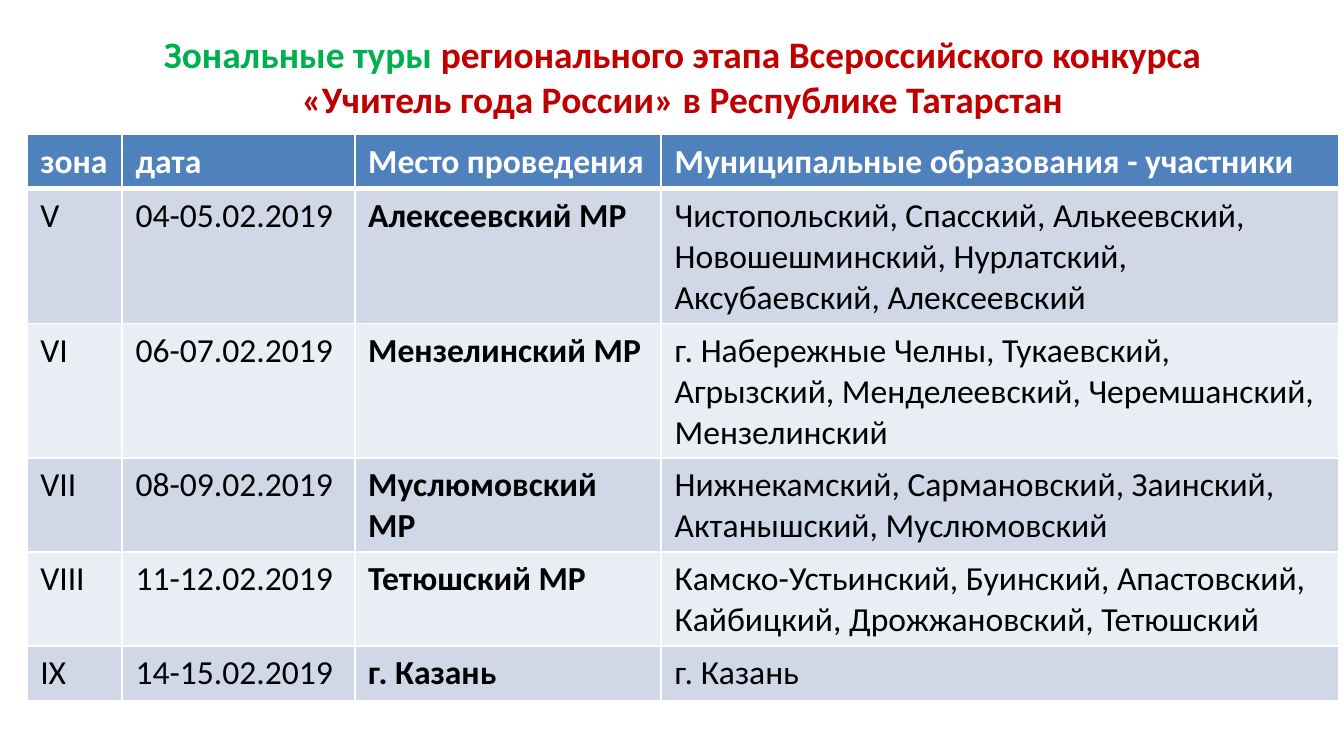
from lxml import etree
from pptx import Presentation
from pptx import util as u
from pptx.dml.color import RGBColor
from pptx.enum import text
from pptx.oxml import ns

COLORS = {
    "green": "00B050",
    "red": "C00000",
    "header": "4F81BD",
    "odd": "D0D8E8",
    "even": "E9EDF4",
    "white": "FFFFFF",
    "black": "000000",
}
COLUMN_WIDTHS = [51.1, 124.6, 164.2, 362.9]
ROW_HEIGHT = 29.2
HEADINGS = ["зона", "дата", "Место проведения", "Муниципальные образования - участники"]
ZONES = [
    ("V", "04-05.02.2019", "Алексеевский МР",
     "Чистопольский, Спасский, Алькеевский, Новошешминский, Нурлатский, Аксубаевский, Алексеевский"),
    ("VI", "06-07.02.2019", "Мензелинский МР",
     "г. Набережные Челны, Тукаевский, Агрызский, Менделеевский, Черемшанский, Мензелинский"),
    ("VII", "08-09.02.2019", "Муслюмовский МР",
     "Нижнекамский, Сармановский, Заинский, Актанышский, Муслюмовский"),
    ("VIII", "11-12.02.2019", "Тетюшский МР",
     "Камско-Устьинский, Буинский, Апастовский, Кайбицкий, Дрожжановский, Тетюшский"),
    ("IX", "14-15.02.2019", "г. Казань", "г. Казань"),
]


class SlideBuilder:
    font_name = "Calibri"
    title_size = 20
    table_size = 18

    def __init__(self, slide):
        self.slide = slide

    def color(self, name):
        return RGBColor.from_string(COLORS[name])

    def style(self, font, size, bold):
        font.name = self.font_name
        font.size = u.Pt(size)
        font.bold = bold

    def title(self, left, top, width, height, spans):
        box = self.slide.shapes.title
        box.left, box.top, box.width, box.height = map(u.Pt, (left, top, width, height))
        frame = box.text_frame
        frame.auto_size = text.MSO_AUTO_SIZE.SHAPE_TO_FIT_TEXT
        frame.vertical_anchor = text.MSO_ANCHOR.TOP
        para = frame.paragraphs[0]
        para.alignment = text.PP_ALIGN.CENTER
        self.style(para.font, self.title_size, True)
        for words, color in spans:
            span = para.add_run()
            span.text = words
            span.font.color.rgb = self.color(color)

    def borders(self, cell, bottom):
        properties = cell._tc.get_or_add_tcPr()
        widths = {"L": 1, "R": 1, "T": 1, "B": bottom}
        for position, (side, width) in enumerate(widths.items()):
            line = etree.Element(ns.qn(f"a:ln{side}"), w=str(u.Pt(width)))
            fill = etree.SubElement(line, ns.qn("a:solidFill"))
            etree.SubElement(fill, ns.qn("a:srgbClr"), val=COLORS["white"])
            properties.insert(position, line)

    def cell(self, cell, words, fill, color, bold, bottom):
        cell.fill.solid()
        cell.fill.fore_color.rgb = self.color(fill)
        cell.text = words
        para = cell.text_frame.paragraphs[0]
        self.style(para.font, self.table_size, bold)
        para.font.color.rgb = self.color(color)
        self.borders(cell, bottom)

    def table(self, left, top, height, headings, records):
        rows = [headings, *records]
        frame = self.slide.shapes.add_table(
            len(rows), len(headings), u.Pt(left), u.Pt(top),
            u.Pt(sum(COLUMN_WIDTHS)), u.Pt(height))
        table = frame.table
        for column, width in zip(table.columns, COLUMN_WIDTHS):
            column.width = u.Pt(width)
        for r, values in enumerate(rows):
            table.rows[r].height = u.Pt(ROW_HEIGHT)
            header = r == 0
            fill = "header" if header else ("odd" if r % 2 else "even")
            for c, words in enumerate(values):
                self.cell(table.cell(r, c), words, fill,
                          "white" if header else "black",
                          header or c == 2,
                          3 if header else 1)
            if r == 1:
                for c in range(len(values)):
                    top_line = table.cell(r, c)._tc.tcPr.find(ns.qn("a:lnT"))
                    top_line.set("w", str(u.Pt(3)))
        frame.height = u.Pt(height)


def main():
    deck = Presentation()
    deck.slide_width, deck.slide_height = u.Pt(720), u.Pt(405)
    page = SlideBuilder(deck.slides.add_slide(deck.slide_layouts[5]))
    page.title(48.2, 13, 635, 55.4, [
        ("Зональные туры ", "green"),
        ("регионального этапа Всероссийского конкурса «Учитель года России» в Республике Татарстан", "red"),
    ])
    page.table(14.4, 72, 303, HEADINGS, ZONES)
    deck.save("out.pptx")


if __name__ == "__main__":
    main()
